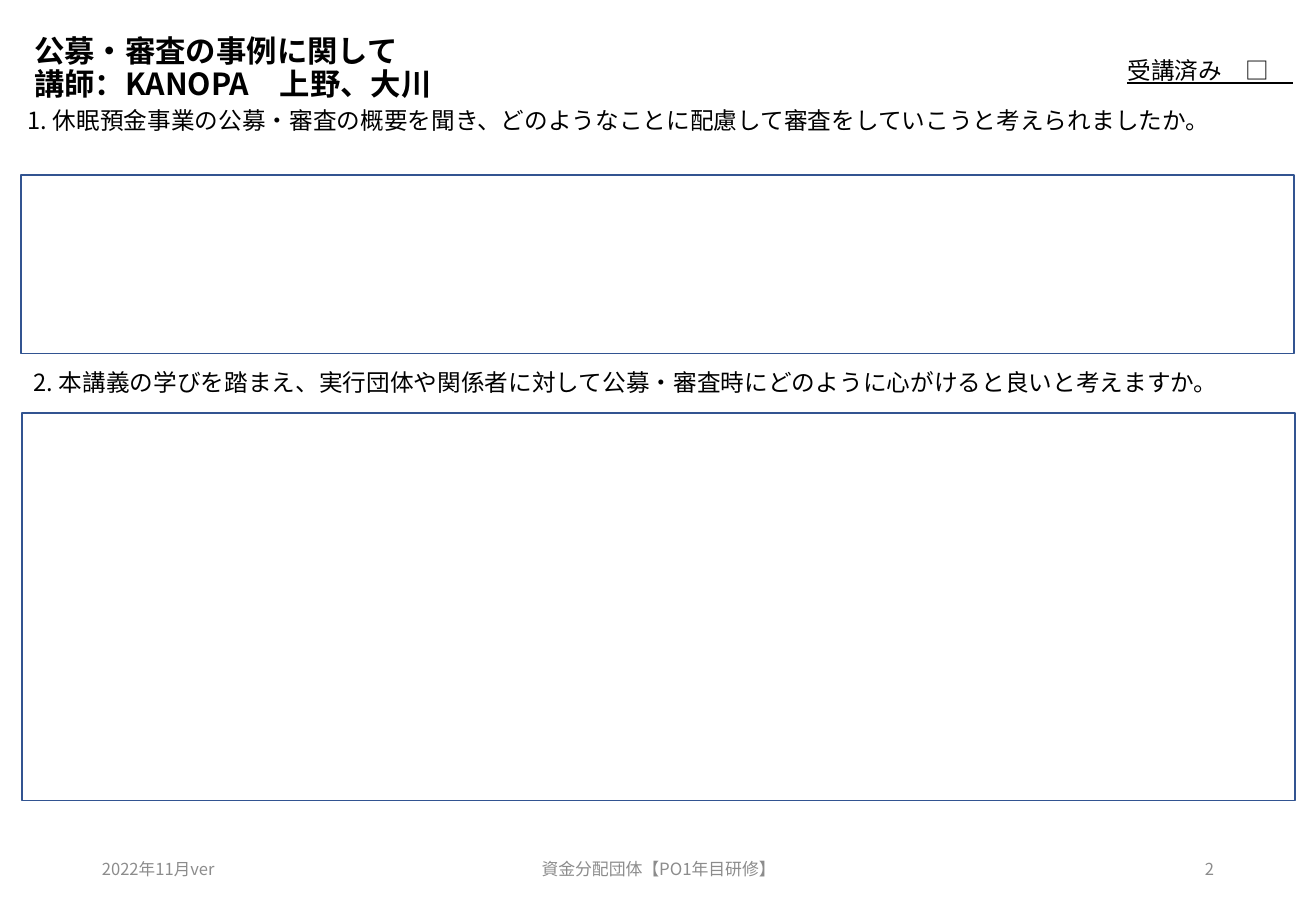
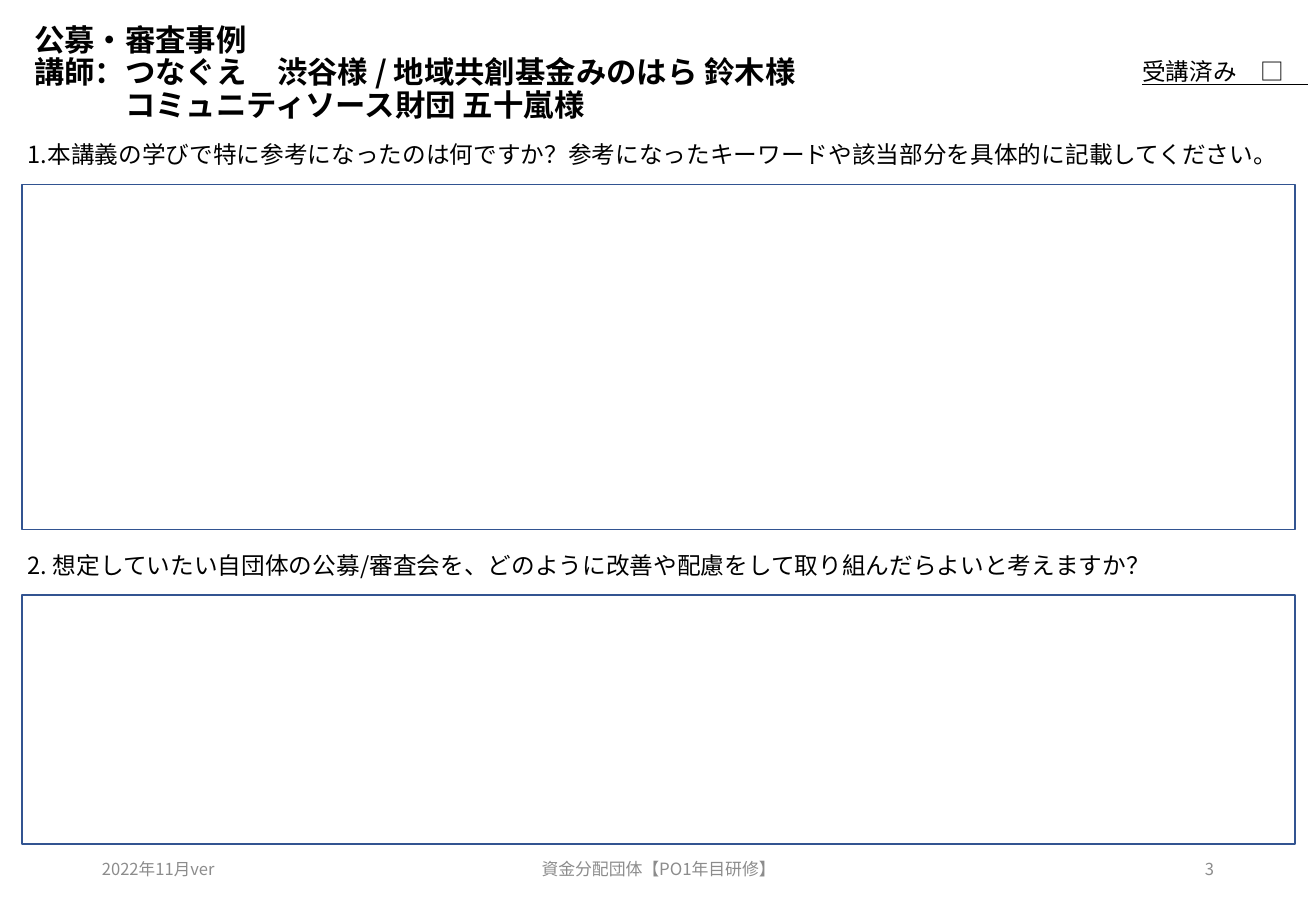
from lxml import etree
from pptx import Presentation
from pptx.dml.color import RGBColor
from pptx.enum.shapes import MSO_SHAPE
from pptx.enum.text import MSO_ANCHOR, MSO_AUTO_SIZE, PP_ALIGN
from pptx.oxml.ns import qn
from pptx.util import Inches, Pt

RECTANGLE = MSO_SHAPE.RECTANGLE
TOP, MIDDLE = MSO_ANCHOR.TOP, MSO_ANCHOR.MIDDLE
LEFT, CENTER, RIGHT = PP_ALIGN.LEFT, PP_ALIGN.CENTER, PP_ALIGN.RIGHT
NO_FIT = MSO_AUTO_SIZE.NONE

FONT = "Noto Sans CJK JP"
INK, GREY, BLUE, WHITE = "000000", "8C8C8C", "325491", "FFFFFF"
TITLE_ONLY = 5
BOX_WIDTH = 10.48
FOOTER_TOP, FOOTER_HEIGHT = 6.95, 0.4

WORKSHEETS = [
    {
        "page": "2",
        "title": [("公募・審査の事例に関して", 0), ("講師：KANOPA　上野、大川", 0)],
        "title_span": (0.14, 0.86),
        "attended_at": (9.18, 0.41),
        "questions": [
            (0.13, 0.82, "1. 休眠預金事業の公募・審査の概要を聞き、どのようなことに配慮して審査をしていこうと考えられましたか。"),
            (0.18, 2.98, "2. 本講義の学びを踏まえ、実行団体や関係者に対して公募・審査時にどのように心がけると良いと考えますか。"),
        ],
        "answers": [(0.17, 1.44, 1.47), (0.18, 3.4, 3.19)],
    },
    {
        "page": "3",
        "title": [
            ("公募・審査事例", 0),
            ("講師：つなぐえ　渋谷様 / 地域共創基金みのはら 鈴木様", 0),
            ("コミュニティソース財団 五十嵐様", 0.75),
        ],
        "title_span": (0.15, 0.92),
        "attended_at": (9.3, 0.42),
        "questions": [
            (0.13, 1.1, "1.本講義の学びで特に参考になったのは何ですか？参考になったキーワードや該当部分を具体的に記載してください。"),
            (0.13, 4.49, "2. 想定していたい自団体の公募/審査会を、どのように改善や配慮をして取り組んだらよいと考えますか？"),
        ],
        "answers": [(0.18, 1.52, 2.84), (0.18, 4.9, 2.05)],
    },
]


def color(hex_code):
    """Turn a hex string into a colour."""
    return RGBColor.from_string(hex_code)


def add_run(paragraph, text, size, ink=INK, bold=False, underline=False):
    """Add one run with the shared Latin and East Asian font."""
    run = paragraph.add_run()
    run.text = text
    font = run.font
    font.name, font.size, font.bold, font.underline = FONT, Pt(size), bold, underline
    font.color.rgb = color(ink)
    east_asian = etree.Element(qn("a:ea"), typeface=FONT)
    font._element.find(qn("a:latin")).addnext(east_asian)


def add_label(slide, area, text, size, ink=INK, align=LEFT, anchor=TOP, underline=False):
    """Add a wrapped one-paragraph text box."""
    frame = slide.shapes.add_textbox(*map(Inches, area)).text_frame
    frame.word_wrap = True
    frame.vertical_anchor = anchor
    paragraph = frame.paragraphs[0]
    paragraph.alignment = align
    add_run(paragraph, text, size, ink, underline=underline)


def set_title(slide, lines, top, height):
    """Place the title and fill it line by line with indents."""
    title = slide.shapes.title
    title.left, title.top, title.width, title.height = map(Inches, (0.18, top, 9.34, height))
    frame = title.text_frame
    frame.auto_size = NO_FIT
    frame.word_wrap = True
    frame.vertical_anchor = MIDDLE
    for index, (text, indent) in enumerate(lines):
        paragraph = frame.add_paragraph() if index else frame.paragraphs[0]
        paragraph.alignment = LEFT
        paragraph.line_spacing = 0.9
        paragraph.space_before = Pt(0)
        if indent:
            paragraph._p.get_or_add_pPr().set("marL", str(Inches(indent)))
        add_run(paragraph, text, 18, bold=True)


def add_answer_box(slide, left, top, height):
    """Add an empty outlined box for a written answer."""
    box = slide.shapes.add_shape(RECTANGLE, *map(Inches, (left, top, BOX_WIDTH, height)))
    box.shadow.inherit = False
    box.fill.solid()
    box.fill.fore_color.rgb = color(WHITE)
    box.line.color.rgb = color(BLUE)
    box.line.width = Pt(1)


def add_footer(slide, page):
    """Add the version, the course name and the page number."""
    for left, width, text, size, align in (
        (0.74, 2.44, "2022年11月ver", 9.8, LEFT),
        (3.59, 3.66, "資金分配団体【PO1年目研修】", 10, CENTER),
        (7.65, 2.44, page, 9.8, RIGHT),
    ):
        area = (left, FOOTER_TOP, width, FOOTER_HEIGHT)
        add_label(slide, area, text, size, GREY, align, MIDDLE)


def add_worksheet(prs, sheet):
    """Build one worksheet slide from its content."""
    slide = prs.slides.add_slide(prs.slide_layouts[TITLE_ONLY])
    set_title(slide, sheet["title"], *sheet["title_span"])
    for answer in sheet["answers"]:
        add_answer_box(slide, *answer)
    for left, top, question in sheet["questions"]:
        add_label(slide, (left, top, BOX_WIDTH, 0.34), question, 14)
    add_label(slide, (*sheet["attended_at"], 2.01, 0.34), "受講済み　□　", 14, underline=True)
    add_footer(slide, sheet["page"])


def main():
    """Build and save the worksheets."""
    prs = Presentation()
    prs.slide_width, prs.slide_height = Inches(10.83), Inches(7.5)
    for sheet in WORKSHEETS:
        add_worksheet(prs, sheet)
    prs.save("out.pptx")


if __name__ == "__main__":
    main()
